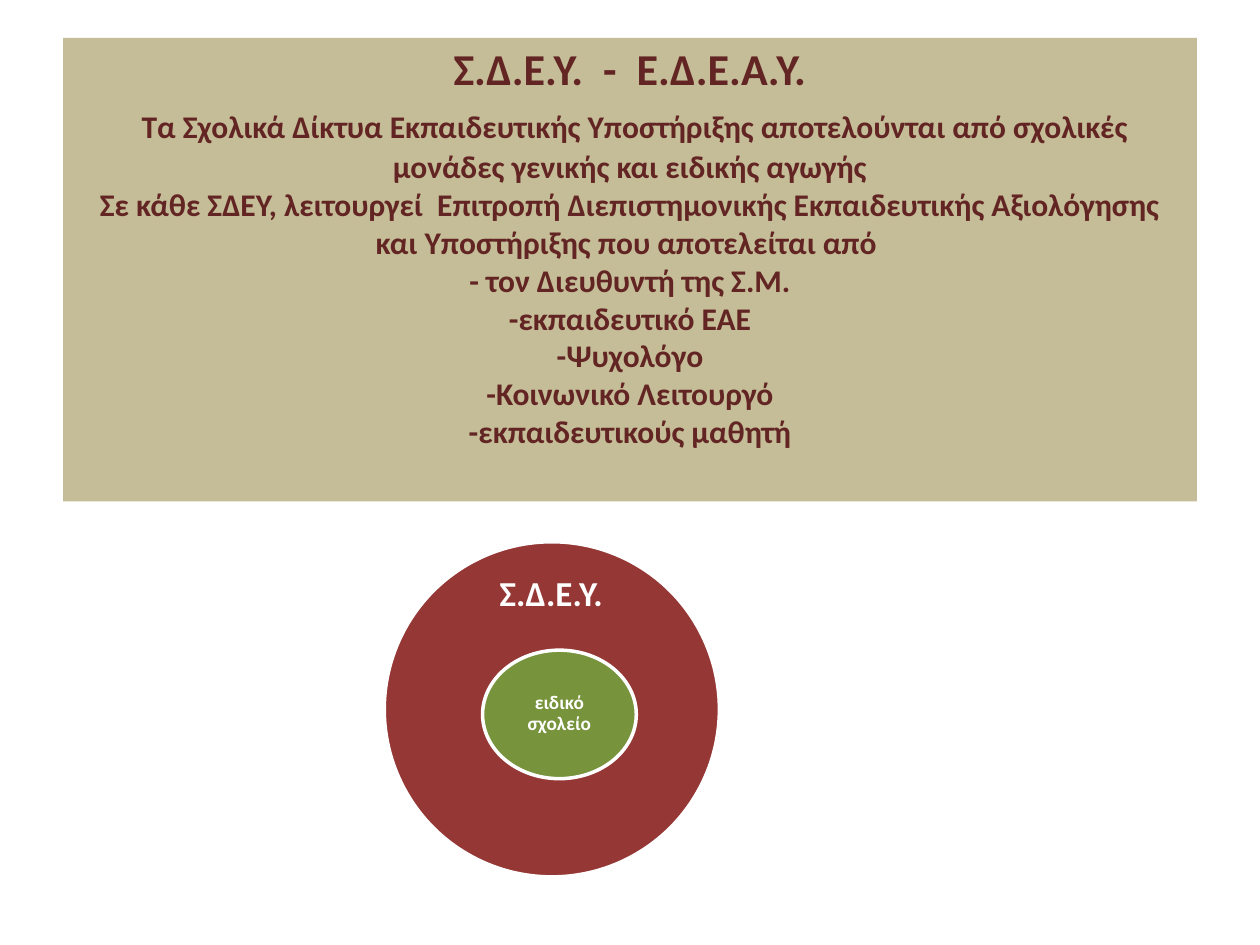
from pptx import Presentation
from pptx import util as u
from pptx.dml.color import RGBColor
from pptx.enum import shapes, text

SAND = RGBColor(0xC4, 0xBD, 0x97)
WINE = RGBColor(0x63, 0x25, 0x23)
RED = RGBColor(0x95, 0x37, 0x35)
GREEN = RGBColor(0x77, 0x93, 0x3C)
WHITE = RGBColor(0xFF, 0xFF, 0xFF)

HEAD = "Σ.Δ.Ε.Υ.  -  Ε.Δ.Ε.Α.Υ.\v "
LINES = [
    "Τα Σχολικά Δίκτυα Εκπαιδευτικής Υποστήριξης αποτελούνται από "
    "σχολικές μονάδες γενικής και ειδικής αγωγής",
    "Σε κάθε ΣΔΕΥ, λειτουργεί  Επιτροπή Διεπιστημονικής Εκπαιδευτικής "
    "Αξιολόγησης και Υποστήριξης που αποτελείται από ",
    "- τον Διευθυντή της Σ.Μ.",
    "-εκπαιδευτικό ΕΑΕ",
    "-Ψυχολόγο",
    "-Κοινωνικό Λειτουργό",
    "-εκπαιδευτικούς μαθητή",
]


def write(para, words, size, color, bold=True, font="Calibri"):
    """Add words to para; each "\\v" becomes a line break."""
    for i, part in enumerate(words.split("\v")):
        if i:
            para.add_line_break()
        run = para.add_run()
        run.text = part
        run.font.name = font
        run.font.size = u.Pt(size)
        run.font.bold = bold
        run.font.color.rgb = color


class Page:
    def __init__(self, deck):
        self.slide = deck.slides.add_slide(deck.slide_layouts[5])

    def frame(self, shape, pad, anchor):
        """Set up the text frame and return its centred paragraph."""
        box = shape.text_frame
        box.word_wrap = True
        box.auto_size = text.MSO_AUTO_SIZE.NONE
        box.vertical_anchor = anchor
        box.margin_left = box.margin_right = u.Inches(pad[0])
        box.margin_top = box.margin_bottom = u.Inches(pad[1])
        para = box.paragraphs[0]
        para.alignment = text.PP_ALIGN.CENTER
        return para

    def title(self, left, top, width, height):
        shape = self.slide.shapes.title
        shape.left, shape.top = u.Inches(left), u.Inches(top)
        shape.width, shape.height = u.Inches(width), u.Inches(height)
        shape.fill.solid()
        shape.fill.fore_color.rgb = SAND
        para = self.frame(shape, (0.1, 0.03), text.MSO_ANCHOR.TOP)
        write(para, HEAD, 25.2, WINE)
        write(para, "\v".join(LINES), 18, WINE)

    def oval(self, left, top, width, height, color):
        shape = self.slide.shapes.add_shape(
            shapes.MSO_SHAPE.OVAL, u.Inches(left), u.Inches(top),
            u.Inches(width), u.Inches(height))
        shape.shadow.inherit = False
        shape.fill.solid()
        shape.fill.fore_color.rgb = color
        shape.line.color.rgb = WHITE
        shape.line.width = u.Pt(2)

    def label(self, left, top, width, height, words, size, pad):
        shape = self.slide.shapes.add_textbox(
            u.Inches(left), u.Inches(top), u.Inches(width), u.Inches(height))
        para = self.frame(shape, (pad, pad), text.MSO_ANCHOR.MIDDLE)
        para.line_spacing = 0.9
        write(para, words, size, WHITE)


def main():
    deck = Presentation()
    deck.slide_width, deck.slide_height = u.Inches(10), u.Inches(7.5)
    page = Page(deck)
    page.title(0.5, 0.3, 9, 3.68)
    page.oval(3.05, 4.3, 2.66, 2.66, RED)
    page.label(3.68, 4.5, 1.39, 0.45, "Σ.Δ.Ε.Υ.", 20, 0.16)
    page.oval(3.83, 5.16, 1.22, 1.02, GREEN)
    page.label(4.01, 5.41, 0.86, 0.51, "ειδικό σχολείο", 11, 0.09)
    deck.save("out.pptx")


if __name__ == "__main__":
    main()
